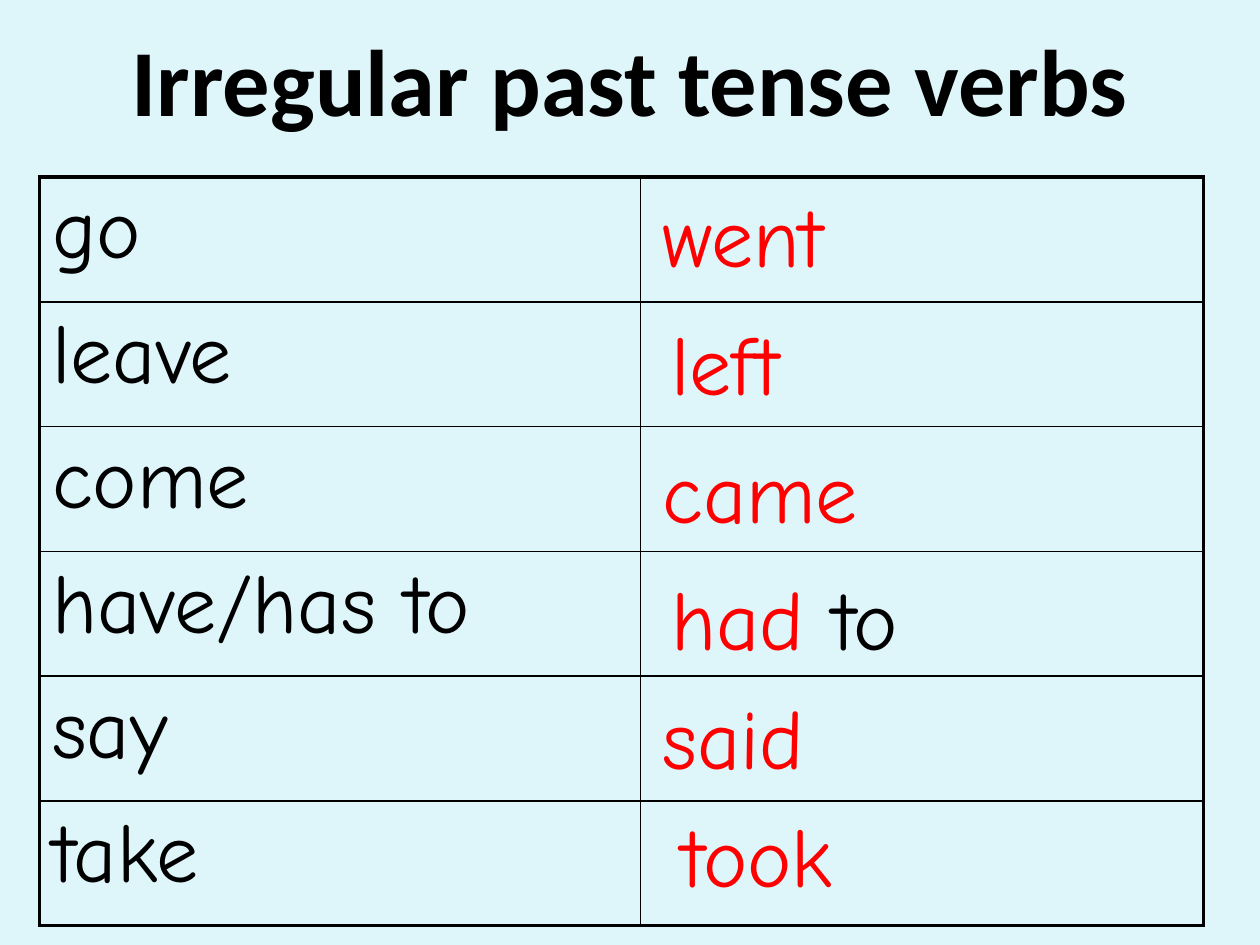
from lxml.etree import fromstring
from pptx import Presentation
from pptx.dml.color import RGBColor
from pptx.enum.text import MSO_ANCHOR, MSO_AUTO_SIZE, PP_ALIGN
from pptx.oxml.ns import nsdecls
from pptx.util import Cm, Pt

COLORS = {"background": "DEF5FA", "text": "000000", "answer": "FF0000"}


def add_text(p, text, font="Comic Neue", size=48, color="text", bold=False):
    r = p.add_run()
    r.text = text
    r.font.name = font
    r.font.size = Pt(size)
    r.font.bold = bold
    r.font.color.rgb = RGBColor.from_string(COLORS[color])


def set_borders(cell, widths):
    tcPr = cell._tc.get_or_add_tcPr()
    for i, (side, width) in enumerate(widths.items()):
        tcPr.insert(i, fromstring(
            f'<a:ln{side} {nsdecls("a")} w="{Pt(width)}"><a:solidFill>'
            f'<a:srgbClr val="{COLORS["text"]}"/></a:solidFill></a:ln{side}>'))


prs = Presentation()
prs.slide_width, prs.slide_height = Cm(25.4), Cm(19.05)
s = prs.slides.add_slide(prs.slide_layouts[6])
s.background.fill.solid()
s.background.fill.fore_color.rgb = RGBColor.from_string(COLORS["background"])

# Title
tf = s.shapes.add_textbox(0, 0, prs.slide_width, Cm(3.18)).text_frame
tf.word_wrap = True
tf.vertical_anchor = MSO_ANCHOR.MIDDLE
p = tf.paragraphs[0]
p.alignment = PP_ALIGN.CENTER
add_text(p, "Irregular past tense verbs", font="Calibri", size=54, bold=True)

# Verb table: present forms on the left, room for the past forms on the right
verbs = ["go", "leave", "come", "have/has to", "say", "take"]
last = len(verbs) - 1
table = s.shapes.add_table(len(verbs), 2, Cm(0.8), Cm(3.57),
                           Cm(23.47), Cm(15.09)).table
table.first_row = table.horz_banding = False
table.columns[0].width, table.columns[1].width = Cm(12.11), Cm(11.35)
for i, verb in enumerate(verbs):
    table.rows[i].height = Cm(2.515)
    add_text(table.cell(i, 0).text_frame.paragraphs[0], verb)
    for j in range(2):
        cell = table.cell(i, j)
        cell.fill.background()
        outer = {"L": j == 0, "R": j == 1, "T": i == 0, "B": i == last}
        set_borders(cell, {k: 2.25 if edge else 1 for k, edge in outer.items()})

# Past forms: left, top, runs with their colours
answers = [
    (13.11, 3.58, [("went", "answer")]),
    (13.28, 6.15, [("left", "answer")]),
    (13.11, 8.74, [("came", "answer")]),
    (13.28, 11.3, [("had ", "answer"), ("to", "text")]),
    (13.11, 13.69, [("said", "answer")]),
    (13.49, 16.08, [("took", "answer")]),
]
for left, top, runs in answers:
    tf = s.shapes.add_textbox(Cm(left), Cm(top), Cm(11), Cm(2.29)).text_frame
    tf.word_wrap = True
    tf.auto_size = MSO_AUTO_SIZE.SHAPE_TO_FIT_TEXT
    for text, color in runs:
        add_text(tf.paragraphs[0], text, color=color)

prs.save("out.pptx")
